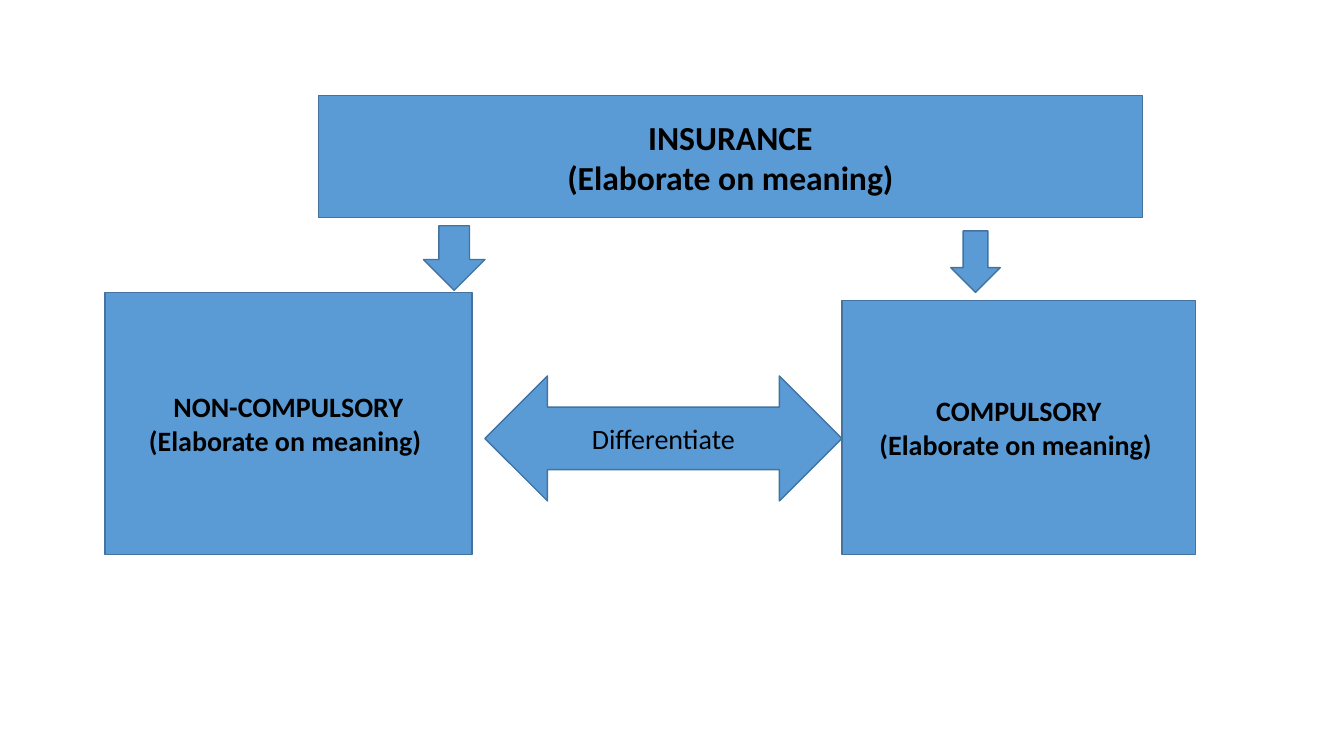
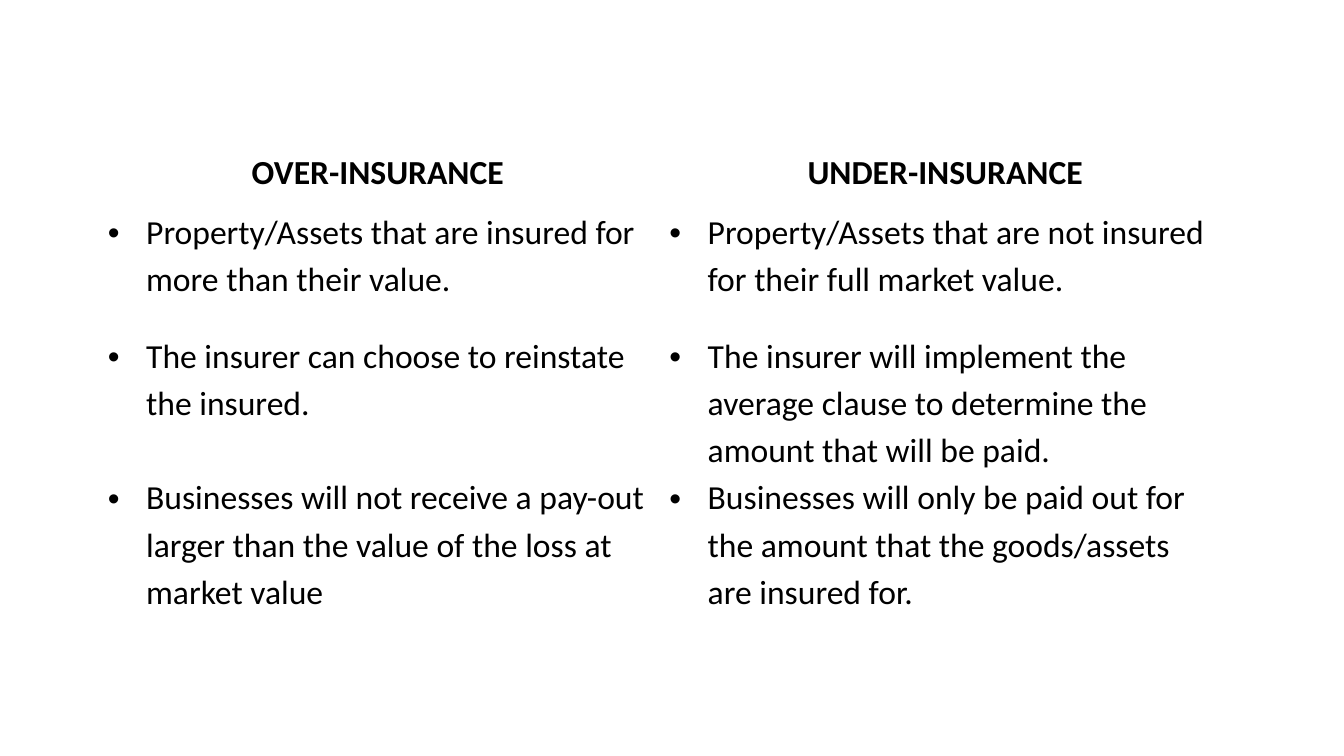
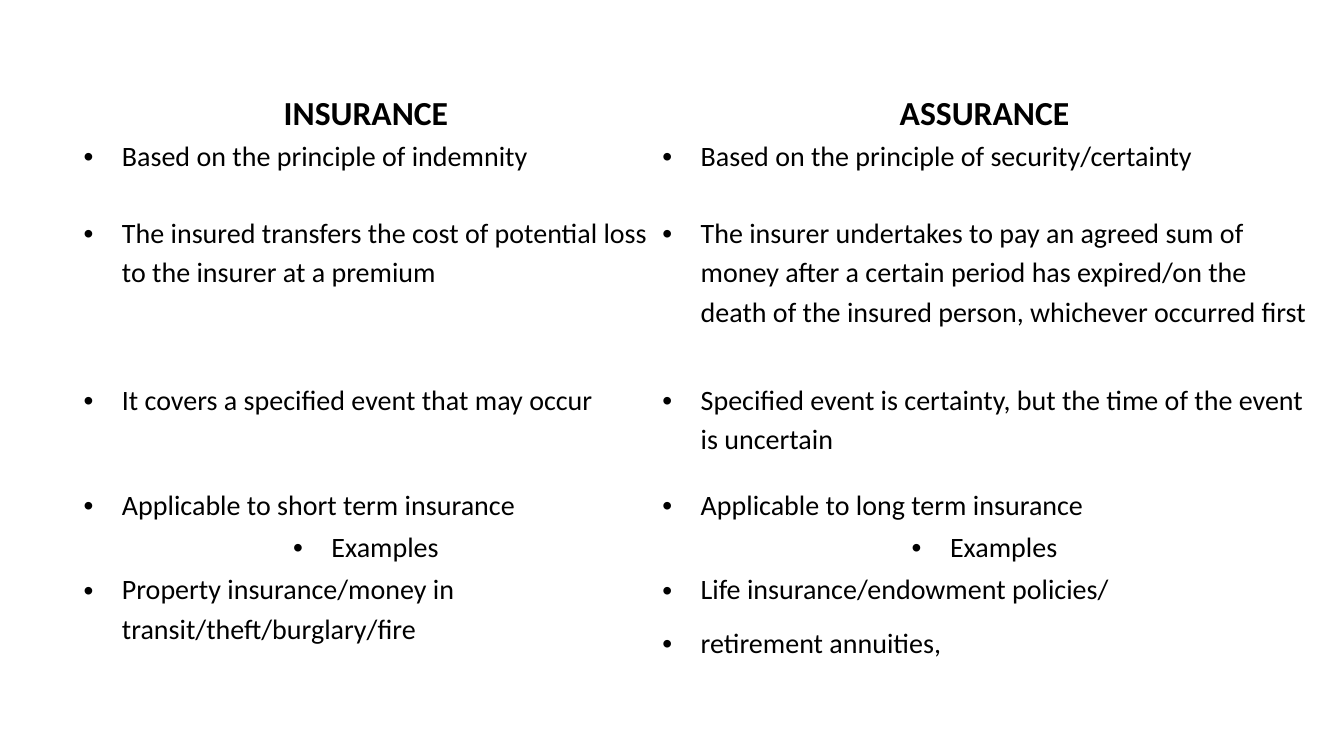
from dataclasses import dataclass

from lxml.etree import SubElement
from pptx import Presentation
from pptx.dml.color import RGBColor
from pptx.enum.shapes import MSO_SHAPE
from pptx.enum.text import MSO_ANCHOR, PP_ALIGN
from pptx.oxml.ns import qn
from pptx.util import Pt

PX = 9144


@dataclass(frozen=True)
class Theme:
    """Colours, font and sizes shared by the slides."""
    font: str = "Calibri"
    ink: RGBColor = RGBColor(0x00, 0x00, 0x00)
    block: RGBColor = RGBColor(0x5B, 0x9B, 0xD5)
    outline: RGBColor = RGBColor(0x43, 0x73, 0x9E)
    grid: str = "FFFFFF"
    heading: int = 24
    body: int = 20
    line: int = 1
    leading: float = 1.15
    gap: int = 10
    indent: int = 38
    inset: int = 7


THEME = Theme()


def px(length):
    """Turn px into EMU."""
    return length * PX


def style_runs(paragraph, size, bold):
    """Give every run the theme font."""
    for run in paragraph.runs:
        run.font.name = THEME.font
        run.font.size = Pt(size)
        run.font.bold = bold
        run.font.color.rgb = THEME.ink


def add_block(slide, box, preset, place, label="", size=THEME.body, bold=True):
    """Draw one outlined block, placed within the box."""
    left, top, width, height = place
    block = slide.shapes.add_shape(
        preset, px(box[0] + left), px(box[1] + top), px(width), px(height))
    block.shadow.inherit = False
    block.fill.solid()
    block.fill.fore_color.rgb = THEME.block
    block.line.color.rgb = THEME.outline
    block.line.width = Pt(THEME.line)
    if label:
        frame = block.text_frame
        frame.text = label
        frame.word_wrap = True
        frame.vertical_anchor = MSO_ANCHOR.MIDDLE
        for paragraph in frame.paragraphs:
            paragraph.alignment = PP_ALIGN.CENTER
            style_runs(paragraph, size, bold)


def insurance_tree(slide, box):
    """Draw insurance split into its two kinds."""
    rect, down = MSO_SHAPE.RECTANGLE, MSO_SHAPE.DOWN_ARROW
    add_block(slide, box, rect, (212, 0, 817, 121),
              "INSURANCE\n(Elaborate on meaning)", THEME.heading)
    add_block(slide, box, rect, (0, 195, 364, 260),
              "NON-COMPULSORY\n(Elaborate on meaning) ")
    add_block(slide, box, rect, (731, 203, 351, 252),
              "COMPULSORY\v(Elaborate on meaning) ")
    add_block(slide, box, down, (316, 129, 61, 64))
    add_block(slide, box, down, (839, 134, 49, 61))
    add_block(slide, box, MSO_SHAPE.LEFT_RIGHT_ARROW, (377, 278, 354, 124),
              "Differentiate", bold=False)


def add_bullet(paragraph):
    """Add a hanging bullet."""
    properties = paragraph._p.get_or_add_pPr()
    properties.set("marL", str(px(THEME.indent)))
    properties.set("indent", str(-px(THEME.indent)))
    SubElement(properties, qn("a:buFont"), typeface="Arial")
    SubElement(properties, qn("a:buChar"), char="•")


def add_borders(cell):
    """Rule all four sides of a cell."""
    properties = cell._tc.get_or_add_tcPr()
    for position, side in enumerate(("lnL", "lnR", "lnT", "lnB")):
        rule = SubElement(properties, qn(f"a:{side}"), w=str(Pt(THEME.line)))
        SubElement(SubElement(rule, qn("a:solidFill")),
                   qn("a:srgbClr"), val=THEME.grid)
        properties.insert(position, rule)


def fill_cell(cell, content, size, is_heading, centred):
    """Write one heading or bulleted cell."""
    cell.fill.background()
    add_borders(cell)
    cell.margin_left = cell.margin_right = px(THEME.inset)
    cell.margin_top = cell.margin_bottom = 0
    cell.text_frame.text = content
    for paragraph in cell.text_frame.paragraphs:
        paragraph.alignment = PP_ALIGN.CENTER if centred else PP_ALIGN.LEFT
        paragraph.line_spacing = THEME.leading
        paragraph.space_after = Pt(THEME.gap)
        if not is_heading:
            add_bullet(paragraph)
        style_runs(paragraph, size, is_heading)


def comparison(slide, box, widths, heights, rows, body_size):
    """Set two ideas side by side under their headings."""
    left, top = box
    table = slide.shapes.add_table(
        len(rows), len(widths), px(left), px(top),
        px(sum(widths)), px(sum(heights))).table
    table.first_row = table.horz_banding = False
    for column, width in zip(table.columns, widths):
        column.width = px(width)
    for index, (row, height, contents) in enumerate(
            zip(table.rows, heights, rows)):
        row.height = px(height)
        is_heading = index == 0
        size = THEME.heading if is_heading else body_size
        for cell, content in zip(row.cells, contents):
            fill_cell(cell, content, size, is_heading,
                      is_heading or content == "Examples")


COVER_ROWS = [
    ("OVER-INSURANCE ", "UNDER-INSURANCE"),
    ("Property/Assets that are insured for more than their value.",
     "Property/Assets that are not insured for their full market value."),
    ("The insurer can choose to reinstate the insured.",
     "The insurer will implement the average clause to determine the amount "
     "that will be paid."),
    ("Businesses will not receive a pay-out larger than the value of the loss "
     "at market value",
     "Businesses will only be paid out for the amount that the goods/assets "
     "are insured for."),
]

ASSURANCE_ROWS = [
    ("INSURANCE", "ASSURANCE"),
    ("Based on the principle of indemnity",
     "Based on the principle of security/certainty"),
    ("The insured transfers the cost of potential loss to the insurer at a "
     "premium",
     "The insurer undertakes to pay an agreed sum of money after a certain "
     "period has expired/on the death of the insured person, whichever "
     "occurred first"),
    ("It covers a specified event that may occur",
     "Specified event is certainty, but the time of the event is uncertain"),
    ("Applicable to short term insurance", "Applicable to long term insurance"),
    ("Examples", "Examples"),
    ("Property insurance/money in transit/theft/burglary/fire",
     "Life insurance/endowment policies/\nretirement annuities,"),
]


def main():
    """Build and save the three slides."""
    deck = Presentation()
    deck.slide_width, deck.slide_height = px(1333), px(750)
    kinds, cover, assurance = (
        deck.slides.add_slide(deck.slide_layouts[6]) for _ in range(3))
    insurance_tree(kinds, (104, 95))
    comparison(cover, (100, 145), (557, 561), (60, 123, 140, 140),
               COVER_ROWS, THEME.heading)
    comparison(assurance, (76, 87), (574, 653),
               (42, 76, 166, 104, 42, 42, 104), ASSURANCE_ROWS, THEME.body)
    deck.save("out.pptx")


if __name__ == "__main__":
    main()
